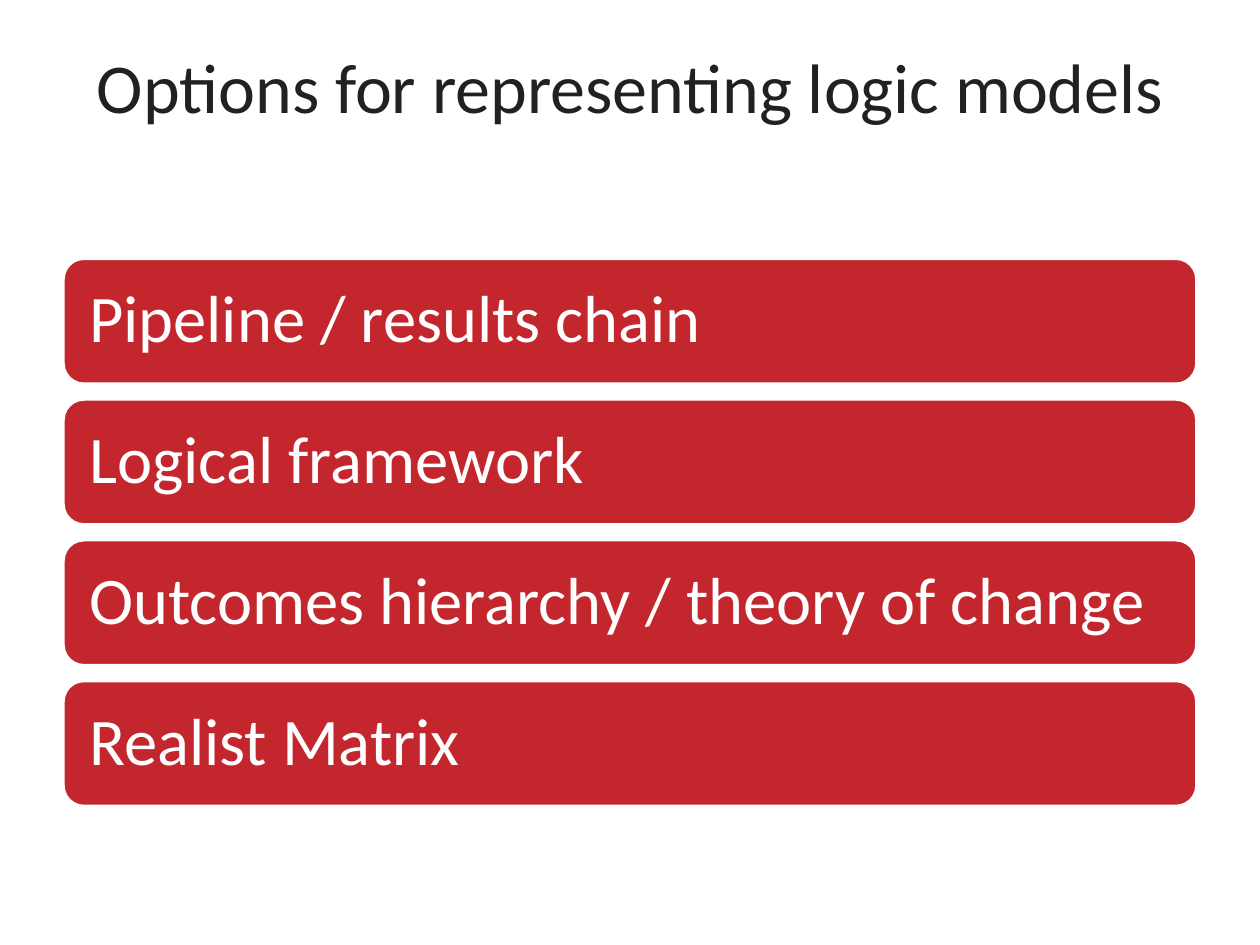
from pptx import Presentation
from pptx.dml.color import RGBColor
from pptx.enum.shapes import MSO_SHAPE
from pptx.enum.text import MSO_ANCHOR, PP_ALIGN
from pptx.util import Inches, Pt

COLORS = {"title": "212121", "bar": "C4262E", "white": "FFFFFF"}
FONT = "Calibri"
OPTIONS = [
    "Pipeline / results chain",
    "Logical framework",
    "Outcomes hierarchy / theory of change",
    "Realist Matrix",
]
LEFT, WIDTH = 0.5, 9
FIRST_TOP, BAR_HEIGHT, BAR_PITCH = 2.05, 1, 1.117
BAR_INSET = 0.16


def color(name):
    return RGBColor.from_string(COLORS[name])


def write_line(frame, text, size, color_name, alignment):
    frame.word_wrap = True
    frame.text = text
    line = frame.paragraphs[0]
    line.alignment = alignment
    font = line.runs[0].font
    font.name = FONT
    font.size = Pt(size)
    font.color.rgb = color(color_name)
    return line


def add_title(slide, text):
    title = slide.shapes.add_textbox(
        Inches(LEFT), Inches(0.3), Inches(WIDTH), Inches(1.25)
    )
    write_line(title.text_frame, text, 40, "title", PP_ALIGN.CENTER)


def add_option(slide, text, top):
    bar = slide.shapes.add_shape(
        MSO_SHAPE.ROUNDED_RECTANGLE,
        Inches(LEFT), Inches(top), Inches(WIDTH), Inches(BAR_HEIGHT),
    )
    bar.shadow.inherit = False
    bar.fill.solid()
    bar.fill.fore_color.rgb = color("bar")
    bar.line.color.rgb = color("white")
    bar.line.width = Pt(2)
    frame = bar.text_frame
    frame.margin_left = frame.margin_right = Inches(BAR_INSET)
    frame.margin_top = frame.margin_bottom = Inches(BAR_INSET)
    frame.vertical_anchor = MSO_ANCHOR.MIDDLE
    label = write_line(frame, text, 38, "white", PP_ALIGN.LEFT)
    label.line_spacing = 0.9


def main():
    presentation = Presentation()
    presentation.slide_width = Inches(10)
    presentation.slide_height = Inches(7.5)
    slide = presentation.slides.add_slide(presentation.slide_layouts[6])
    add_title(slide, "Options for representing logic models")
    for index, option in enumerate(OPTIONS):
        add_option(slide, option, FIRST_TOP + index * BAR_PITCH)
    presentation.save("out.pptx")


if __name__ == "__main__":
    main()
